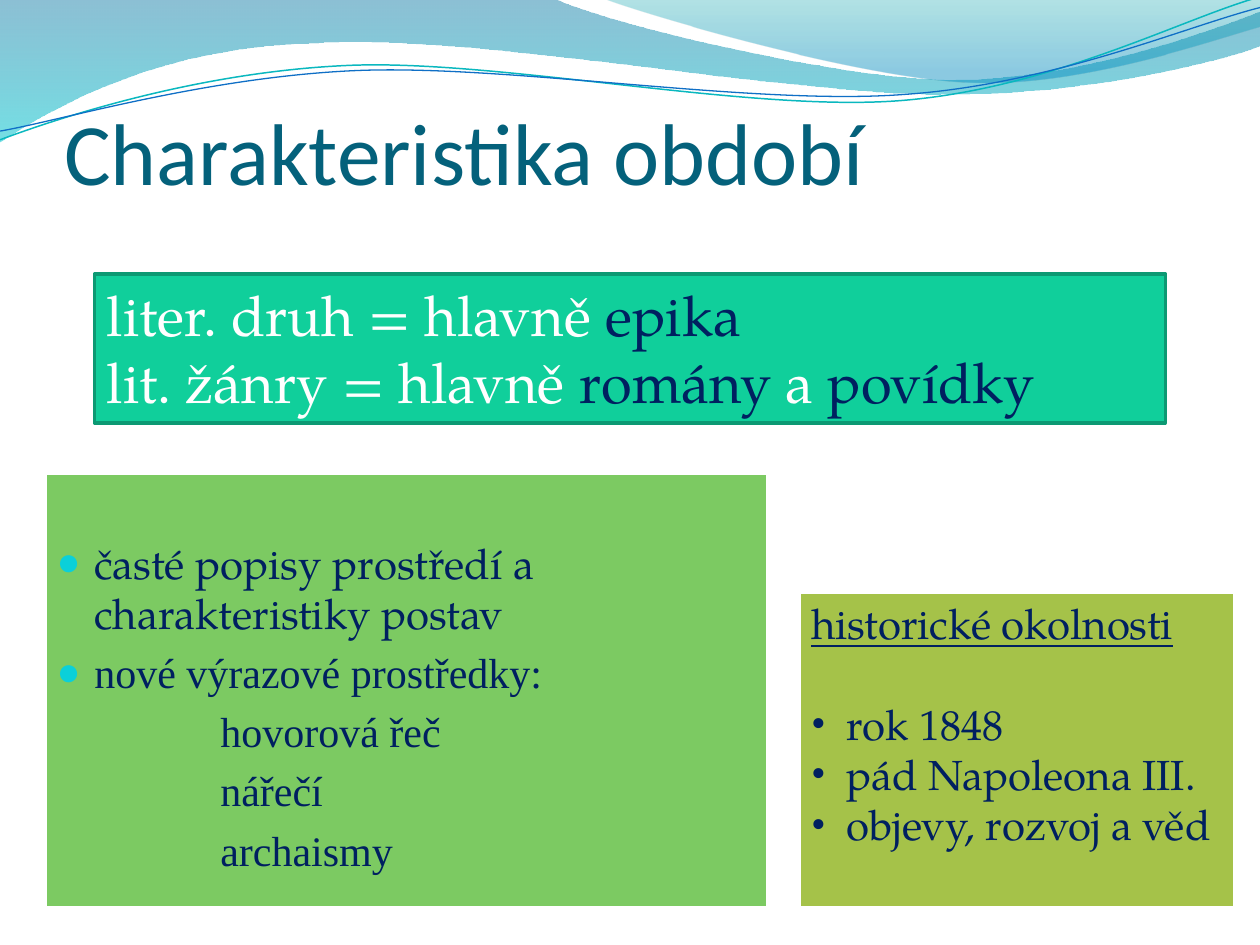
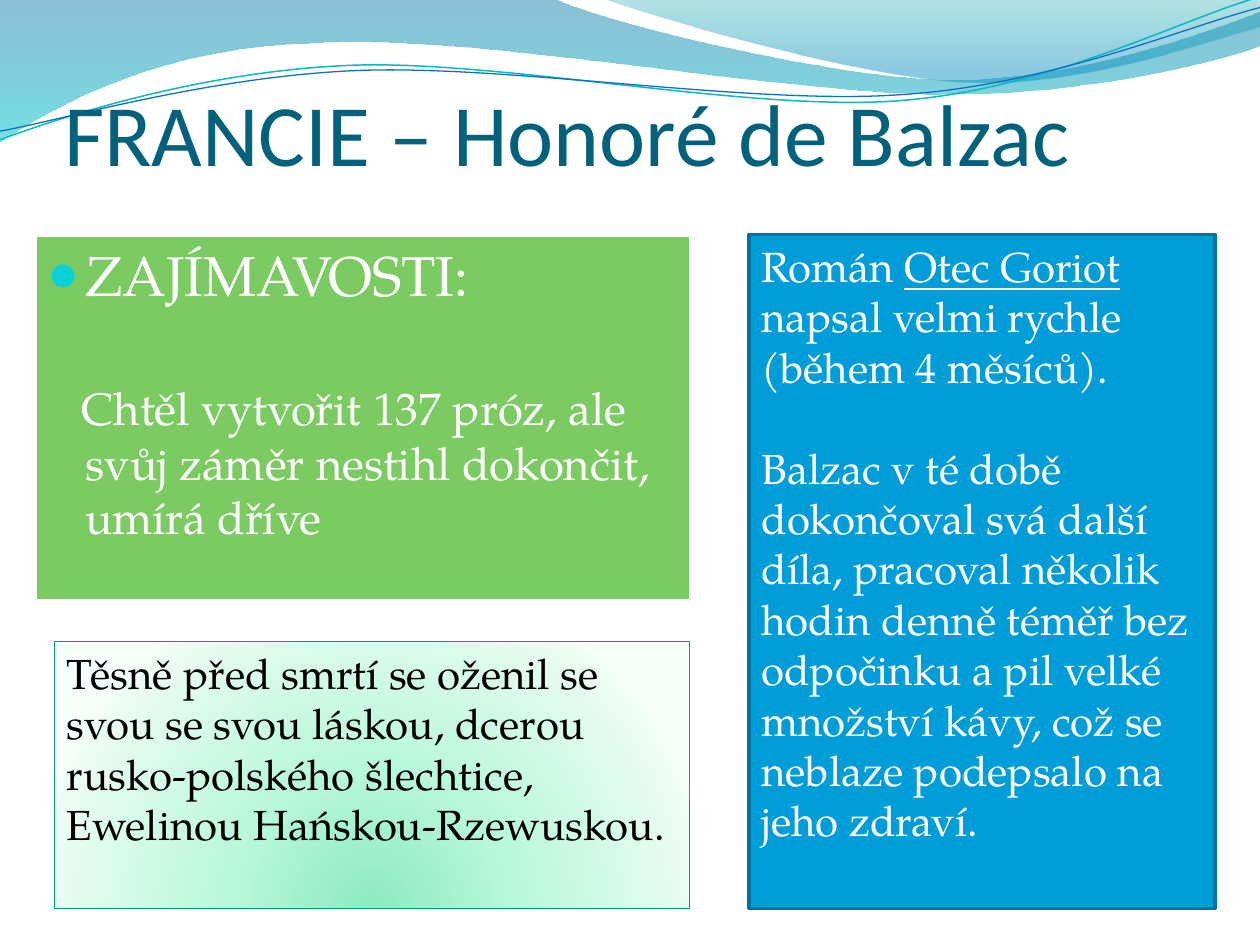
from dataclasses import dataclass

from pptx import Presentation
from pptx.dml.color import RGBColor as Rgb
from pptx.enum.shapes import MSO_SHAPE as Kind
from pptx.enum.text import MSO_ANCHOR as Anchor
from pptx.oxml import parse_xml
from pptx.oxml.ns import nsdecls, qn
from pptx.util import Pt


@dataclass(frozen=True)
class Theme:
    head_font: str = "Calibri"
    body_font: str = "TeX Gyre Pagella"
    alt_font: str = "Times New Roman"
    head: int = 50
    large: int = 32
    mid: int = 26
    text: int = 24
    title: str = "04617B"
    navy: str = "002060"
    white: str = "FFFFFF"
    black: str = "000000"
    dot: str = "0BD0D9"
    green: str = "7CCA62"
    mint: str = "10CF9B"
    mint_edge: str = "0C9973"
    olive: str = "A5C249"
    blue: str = "009DD9"
    blue_edge: str = "0074A1"
    pale_edge: str = "0A9B74"
    wave_teal: str = "0AB8BF"
    wave_blue: str = "0F6FC6"
    # Gradient stops: position, colour, opacity (all but colour in percent)
    band: tuple = ((0, "0074A1", 45), (100, "00C6CF", 55))
    crest: tuple = ((0, "00A1A9", 30), (80, "008BBF", 45))
    glow: tuple = ((0, "8DEAC2", 100), (43, "BAF8DB", 100),
                   (93, "EAFCF3", 100), (100, "F7FFFB", 100))


T = Theme()
DOWN = '<a:lin ang="5400000" scaled="0"/>'
RADIAL = ('<a:path path="circle"><a:fillToRect l="50000" t="130000" '
          'r="50000" b="-30000"/></a:path>')
HANG = 21.6   # hanging indent of bulleted text
LINE = 28.8   # height of one line of body text

# Each step is a line end (2 numbers) or a curve (6 numbers), in points.
BAND = [(0, 0), (316.8, -0.7),
        (342.7, 12.2, 478.1, 45.4, 545.8, 45.4),
        (614.2, 45.4, 689.8, 18.7, 720, 6.5), (720.7, 25.9),
        (707.8, 31.7, 626.4, 54.7, 537.1, 54),
        (447.8, 54, 275, 20.2, 185, 24.5),
        (92.2, 25.9, 33.1, 59.8, -0.7, 81.4)]
CREST = [(344.9, -0.7), (366.5, 7.9, 491, 44.6, 553.7, 46.8),
         (616.3, 49.7, 691.9, 23, 720, 15.1), (720, 0)]
TEAL_WAVE = [(0, 79.9), (34.6, 67, 113.8, 41, 199.4, 37.4),
             (284.4, 33.8, 427, 64.1, 513.4, 57.6),
             (599.8, 51.1, 675.4, 10.8, 718.6, -1.4)]
BLUE_WAVE = [(0, 74.9), (33.8, 69.1, 118.1, 43.9, 203.8, 40.3),
             (290.2, 36.7, 430.6, 60.5, 516.2, 54),
             (601.9, 48.2, 677.5, 15.1, 720, 4.3)]


@dataclass
class Para:
    """A paragraph; runs are (text, own colour or None, underlined)."""
    runs: list
    size: int = T.text
    color: str = T.navy
    font: str = T.body_font
    left: float = 0
    first: float = 0
    gap: float = 0
    mark: str = ""
    tint: str = ""


def plain(text, **style):
    return Para([(text, None, False)], **style)


def dotted(text, **style):
    return plain(text, left=HANG, first=-HANG, mark="●", tint=T.dot, **style)


def blend(shape, stops, course):
    """Fill with a gradient whose stops may be see-through."""
    shape.fill.gradient()
    marks = "".join(
        f'<a:gs pos="{pos * 1000}"><a:srgbClr val="{color}">'
        f'<a:alpha val="{alpha * 1000}"/></a:srgbClr></a:gs>'
        for pos, color, alpha in stops)
    props = shape._element.spPr
    props.replace(props.find(qn("a:gradFill")), parse_xml(
        f'<a:gradFill {nsdecls("a")} rotWithShape="1">'
        f'<a:gsLst>{marks}</a:gsLst>{course}</a:gradFill>'))


def stroke(shape, color, width):
    shape.line.color.rgb = Rgb.from_string(color)
    shape.line.width = Pt(width)


def bend(shape, steps):
    """Join the three line ends of each curved step into one curve."""
    lines = iter(list(shape._element.iter(qn("a:lnTo"))))
    for step in steps[1:]:
        ends = [next(lines) for _ in range(len(step) // 2)]
        if len(ends) == 3:
            curve = parse_xml(f'<a:cubicBezTo {nsdecls("a")}/>')
            ends[0].addprevious(curve)
            for end in ends:
                curve.append(end[0])
                end.getparent().remove(end)


def outline(slide, steps, close):
    start, *rest = [(Pt(x), Pt(y)) for step in steps
                    for x, y in zip(step[::2], step[1::2])]
    pen = slide.shapes.build_freeform(*start)
    pen.add_line_segments(rest, close=close)
    shape = pen.convert_to_shape()
    bend(shape, steps)
    shape.shadow.inherit = False
    return shape


def waves(slide):
    for steps, stops in ((BAND, T.band), (CREST, T.crest)):
        area = outline(slide, steps, True)
        blend(area, stops, DOWN)
        area.line.fill.background()
    for steps, color, width in ((TEAL_WAVE, T.wave_teal, 0.85),
                                (BLUE_WAVE, T.wave_blue, 0.75)):
        curve = outline(slide, steps, False)
        curve.fill.background()
        stroke(curve, color, width)


def bullet(props, mark, tint):
    tags = [f'<a:buFont {nsdecls("a")} typeface="{T.alt_font}"/>',
            f'<a:buChar {nsdecls("a")} char="{mark}"/>']
    if tint:
        tags = [f'<a:buClr {nsdecls("a")}><a:srgbClr val="{tint}"/></a:buClr>',
                f'<a:buSzPct {nsdecls("a")} val="95000"/>'] + tags
    for tag in tags:
        props.find(qn("a:defRPr")).addprevious(parse_xml(tag))


def write(frame, paras):
    frame.word_wrap = True
    for i, para in enumerate(paras):
        p = frame.add_paragraph() if i else frame.paragraphs[0]
        p.font.name = para.font
        p.font.size = Pt(para.size)
        p.font.color.rgb = Rgb.from_string(para.color)
        p.space_before = Pt(para.gap)
        props = p._p.get_or_add_pPr()
        props.set("algn", "l")
        props.set("marL", str(Pt(para.left)))
        props.set("indent", str(Pt(para.first)))
        if para.mark:
            bullet(props, para.mark, para.tint)
        for text, color, under in para.runs:
            run = p.add_run()
            run.text = text
            if color:
                run.font.color.rgb = Rgb.from_string(color)
            if under:
                run.font.underline = True


def panel(slide, box, fill, edge, paras, top=3.6):
    """Text on a filled rectangle; edge is (colour, width)."""
    shape = slide.shapes.add_shape(Kind.RECTANGLE, *map(Pt, box))
    shape.shadow.inherit = False
    if isinstance(fill, str):
        shape.fill.solid()
        shape.fill.fore_color.rgb = Rgb.from_string(fill)
    else:
        blend(shape, fill, RADIAL)
    stroke(shape, *edge)
    frame = shape.text_frame
    frame.vertical_anchor = Anchor.TOP
    frame.margin_top = Pt(top)
    write(frame, paras)


def page(deck, title, top):
    slide = deck.slides.add_slide(deck.slide_layouts[6])
    waves(slide)
    frame = slide.shapes.add_textbox(
        Pt(36.7), Pt(top), Pt(648), Pt(90)).text_frame
    frame.margin_left = frame.margin_right = frame.margin_bottom = 0
    frame.vertical_anchor = Anchor.BOTTOM
    write(frame, [plain(title, size=T.head, color=T.title, font=T.head_font)])
    return slide


def era(deck):
    slide = page(deck, "Charakteristika období", 25.8)
    frame_edge = (T.white, 3)
    means = ["hovorová řeč", "nářečí", "archaismy"]
    panel(slide, (25.2, 270, 414, 249.1), T.green, frame_edge,
          [dotted("časté popisy prostředí a charakteristiky postav"),
           dotted("nové výrazové prostředky:", font=T.alt_font, gap=5)]
          + [plain(item, font=T.alt_font, left=93.6, gap=5)
             for item in means], top=37)
    panel(slide, (54, 156.6, 612, 85), T.mint, (T.mint_edge, 2), [
        Para([("liter. druh = hlavně ", None, False),
              ("epika", T.navy, False)], T.large, T.white),
        Para([("lit. žánry = hlavně ", None, False),
              ("romány", T.navy, False), (" a ", None, False),
              ("povídky", T.navy, False)], T.large, T.white)])
    events = ["rok 1848", "pád Napoleona III.", "objevy, rozvoj a věd"]
    panel(slide, (456.5, 337.8, 249.4, 181.4), T.olive, frame_edge,
          [Para([("historické okolnosti", None, True)])]
          + [plain(item, left=20, first=-20, mark="•",
                   gap=0 if i else LINE) for i, item in enumerate(events)])


def author(deck):
    slide = page(deck, "FRANCIE – Honoré de Balzac", 15)
    panel(slide, (19.9, 133.9, 375.1, 209.8), T.green, (T.white, 3), [
        dotted("ZAJÍMAVOSTI:", size=T.large, color=T.white),
        plain("Chtěl vytvořit 137 próz, ale svůj záměr nestihl dokončit, "
              "umírá dříve", size=T.mid, color=T.white,
              left=HANG, first=-2.1, gap=41.4)])
    panel(slide, (428, 133.9, 266.4, 385.2), T.blue, (T.blue_edge, 2), [
        Para([("Román ", None, False), ("Otec Goriot ", None, True),
              ("napsal velmi rychle (během 4 měsíců).", None, False)],
             color=T.white),
        plain("Balzac v té době dokončoval svá další díla, pracoval několik "
              "hodin denně téměř bez odpočinku a pil velké množství kávy, "
              "což se neblaze podepsalo na jeho zdraví.",
              color=T.white, gap=LINE)])
    panel(slide, (31, 366.5, 362.9, 152.6), T.glow, (T.pale_edge, 0.75), [
        plain("Těsně před smrtí se oženil se svou se svou láskou, dcerou "
              "rusko-polského šlechtice, Ewelinou Hańskou-Rzewuskou.",
              color=T.black)])


def main():
    deck = Presentation()
    deck.slide_width, deck.slide_height = Pt(720), Pt(540)
    era(deck)
    author(deck)
    deck.save("out.pptx")


if __name__ == "__main__":
    main()
